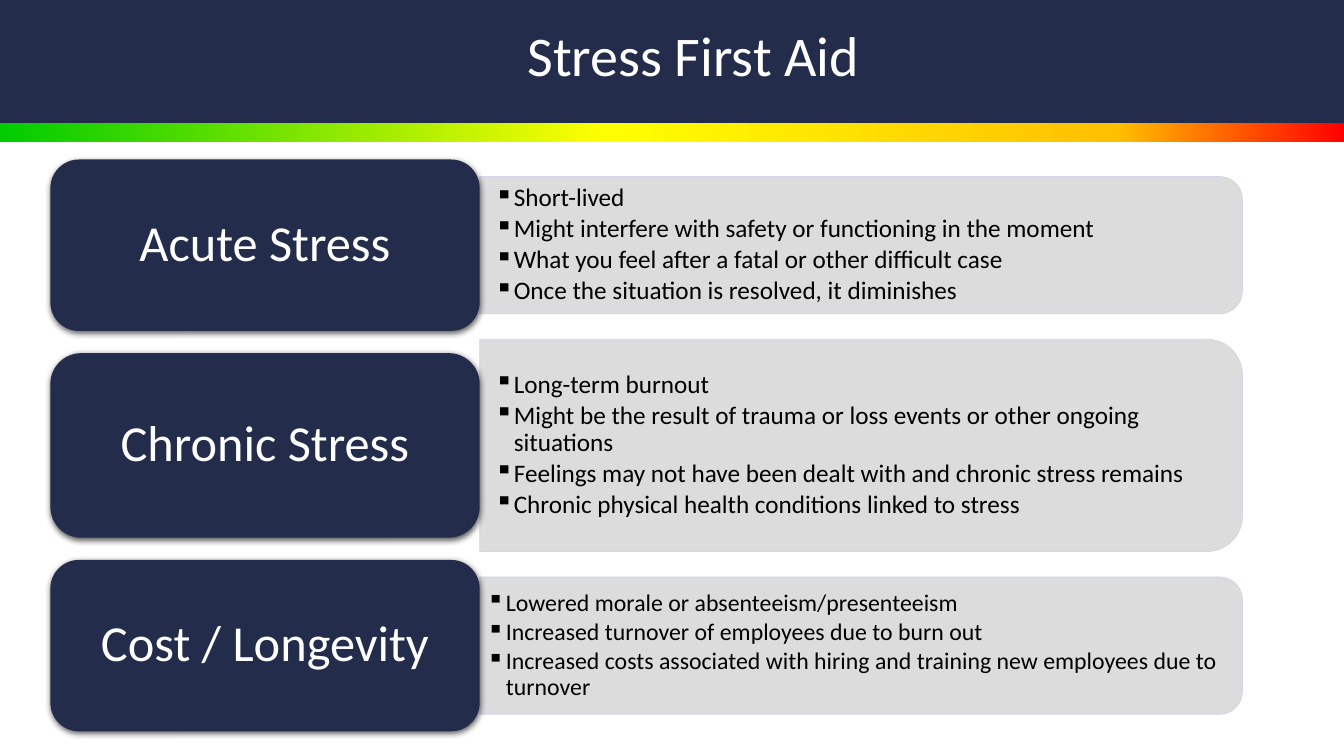
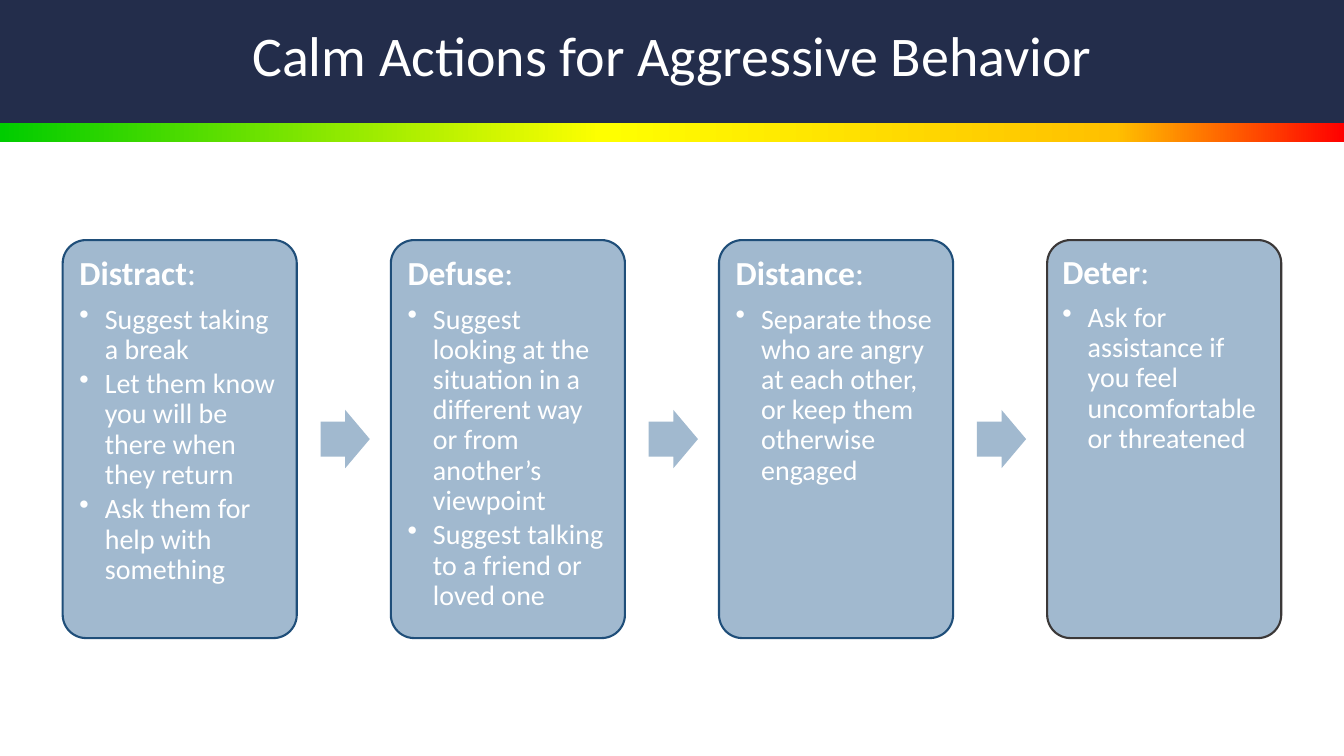
"""Build two slides on stress first aid and calming actions."""
from dataclasses import dataclass

from lxml import etree
from pptx import Presentation
from pptx.dml.color import RGBColor
from pptx.enum.shapes import MSO_SHAPE
from pptx.enum.text import MSO_ANCHOR, PP_ALIGN
from pptx.oxml.ns import qn
from pptx.util import Cm, Pt

RECTANGLE = MSO_SHAPE.RECTANGLE
ROUNDED = MSO_SHAPE.ROUNDED_RECTANGLE
ROUND_TOP = MSO_SHAPE.ROUND_2_SAME_RECTANGLE
ARROW = MSO_SHAPE.RIGHT_ARROW
TOP, MIDDLE = MSO_ANCHOR.TOP, MSO_ANCHOR.MIDDLE
LEFT, CENTER = PP_ALIGN.LEFT, PP_ALIGN.CENTER
SLIDE_WIDTH, SLIDE_HEIGHT = 33.87, 19.05


@dataclass(frozen=True)
class Theme:
    """Colours, font and type sizes of the slides."""
    font: str = "Calibri"
    navy: str = "232D4B"
    panel: str = "D9D9D9"
    panel_edge: str = "CFD5EA"
    steel: str = "A1B9CF"
    card_edge: str = "1F4E79"
    last_card_edge: str = "3B3838"
    white: str = "FFFFFF"
    black: str = "000000"
    scale: tuple = ((0, "00CC00"), (45, "FFFF00"), (83, "FFC000"), (100, "FF0000"))
    title_size: int = 40
    label_size: int = 36
    heading_size: int = 24
    card_size: int = 20
    detail_size: int = 18


THEME = Theme()


def add_element(parent, tag, **attributes):
    """Append a drawing element with the given attributes."""
    return etree.SubElement(parent, qn(tag), {name: str(value) for name, value in attributes.items()})


def write(frame, text, *, size, color, bold=False, ending="", align=LEFT,
          bullet=None, hang=0, after=0):
    """Add one paragraph, with an optional plain ending, to a text frame."""
    first = frame.paragraphs[0]
    paragraph = frame.add_paragraph() if first.runs else first
    paragraph.alignment = align
    paragraph.line_spacing = 0.9
    paragraph.space_after = Pt(after * size)
    if bullet:
        properties = paragraph._p.get_or_add_pPr()
        properties.set("marL", str(Cm(hang)))
        properties.set("indent", str(-Cm(hang)))
        add_element(properties, "a:buChar", char=bullet)
    for words, weight in ((text, bold), (ending, False)):
        if words:
            run = paragraph.add_run()
            run.text = words
            run.font.name = THEME.font
            run.font.size = Pt(size)
            run.font.bold = weight
            run.font.color.rgb = RGBColor.from_string(color)


class Deck:
    """Hold the presentation, its style and the current slide."""

    def __init__(self):
        """Start an empty widescreen presentation."""
        self.presentation = Presentation()
        self.presentation.slide_width = Cm(SLIDE_WIDTH)
        self.presentation.slide_height = Cm(SLIDE_HEIGHT)
        self.slide = None

    def start_slide(self, title, title_left=1.7, title_width=30.48):
        """Add a slide with the colour scale, the band and the title."""
        self.slide = self.presentation.slides.add_slide(self.presentation.slide_layouts[6])
        self.scale_bar(3.1, 0.48)
        self.shape(RECTANGLE, 0, 0, SLIDE_WIDTH, 3.1, THEME.navy)
        frame = self.text_box(title_left, 0.06, title_width, 2.8)
        write(frame, title, size=THEME.title_size, color=THEME.white, align=CENTER)

    def shape(self, kind, left, top, width, height, fill, edge=None, edge_width=1.5):
        """Add a flat preset shape with an optional outline."""
        shape = self.slide.shapes.add_shape(kind, Cm(left), Cm(top), Cm(width), Cm(height))
        shape.shadow.inherit = False
        shape.fill.solid()
        shape.fill.fore_color.rgb = RGBColor.from_string(fill)
        if edge:
            shape.line.color.rgb = RGBColor.from_string(edge)
            shape.line.width = Pt(edge_width)
        else:
            shape.line.fill.background()
        return shape

    def prepare(self, frame, across, down, anchor):
        """Set wrapping, insets and anchor of a text frame."""
        frame.word_wrap = True
        frame.margin_left = frame.margin_right = Cm(across)
        frame.margin_top = frame.margin_bottom = Cm(down)
        frame.vertical_anchor = anchor
        return frame

    def text_box(self, left, top, width, height, across=0.25, down=0.13):
        """Add a text box centred vertically and return its frame."""
        box = self.slide.shapes.add_textbox(Cm(left), Cm(top), Cm(width), Cm(height))
        return self.prepare(box.text_frame, across, down, MIDDLE)

    def scale_bar(self, top, height):
        """Add the full-width bar that runs from green to red."""
        bar = self.shape(RECTANGLE, 0, top, SLIDE_WIDTH, height, THEME.white)
        bar.fill.gradient()
        bar.fill.gradient_angle = 0
        stops = bar.element.spPr.find(".//" + qn("a:gsLst"))
        for stop in list(stops):
            stops.remove(stop)
        for percent, color in THEME.scale:
            add_element(add_element(stops, "a:gs", pos=percent * 1000), "a:srgbClr", val=color)

    def label(self, text, left, top, width, height):
        """Add a navy rounded label with a soft shadow."""
        label = self.shape(ROUNDED, left, top, width, height, THEME.navy)
        effects = label.element.spPr.find(qn("a:effectLst"))
        shadow = add_element(effects, "a:outerShdw", blurRad=Pt(4.5), dist=Pt(1.5),
                             dir=5400000, algn="ctr", rotWithShape=0)
        color = add_element(shadow, "a:srgbClr", val=THEME.black)
        add_element(color, "a:alpha", val=63000)
        frame = self.prepare(label.text_frame, 0.38, 0.18, MIDDLE)
        write(frame, text, size=THEME.label_size, color=THEME.white, align=CENTER)

    def detail_panel(self, items, left, middle, width, height, size, across):
        """Add a grey panel rounded on the right with a bulleted list."""
        panel = self.shape(ROUND_TOP, left + (width - height) / 2, middle - width / 2,
                           height, width, THEME.panel, THEME.panel_edge, 0.5)
        panel.rotation = 90
        for color in panel.element.spPr.iter(qn("a:srgbClr")):
            add_element(color, "a:alpha", val=90000)
        frame = self.text_box(left, middle - height / 2, width - 0.17, height, across, across / 2)
        for item in items:
            write(frame, item, size=size, color=THEME.black, bullet="▪", hang=0.48, after=0.15)

    def card(self, heading, items, left, top, width, height, edge, inset):
        """Add a rounded card with a heading and a bulleted list."""
        card = self.shape(ROUNDED, left, top, width, height, THEME.steel, edge)
        card.adjustments[0] = 0.1
        frame = self.prepare(card.text_frame, inset, inset, TOP)
        write(frame, heading, size=THEME.heading_size, color=THEME.white,
              bold=True, ending=":", after=0.35)
        for item in items:
            write(frame, item, size=THEME.card_size, color=THEME.white,
                  bullet="•", hang=0.64, after=0.15)

    def arrow(self, left, middle, width, height):
        """Add an arrow that points to the next card."""
        arrow = self.shape(ARROW, left, middle - height / 2, width, height, THEME.steel)
        arrow.adjustments[0] = 0.6
        arrow.adjustments[1] = 0.5


def build_stress_slide(deck):
    """Set out the kinds of stress and their costs in three rows."""
    deck.start_slide("Stress First Aid", 5.51, 23.93)
    rows = (
        ("Acute Stress", 4.32, 3.46, THEME.detail_size, 0.38, (
            "Short-lived",
            "Might interfere with safety or functioning in the moment",
            "What you feel after a fatal or other difficult case",
            "Once the situation is resolved, it diminishes")),
        ("Chronic Stress", 4.65, 5.35, THEME.detail_size, 0.38, (
            "Long-term burnout",
            "Might be the result of trauma or loss events or other ongoing situations",
            "Feelings may not have been dealt with and chronic stress remains",
            "Chronic physical health conditions linked to stress")),
        ("Cost / Longevity", 4.32, 3.46, THEME.detail_size - 1, 0.18, (
            "Lowered morale or absenteeism/presenteeism",
            "Increased turnover of employees due to burn out",
            "Increased costs associated with hiring and training new employees due to turnover")),
    )
    left, top, label_width, panel_width, gap = 1.27, 4.02, 10.82, 19.22, 0.56
    for name, label_height, panel_height, size, inset, items in rows:
        deck.detail_panel(items, left + label_width, top + label_height / 2,
                          panel_width, panel_height, size, inset)
        deck.label(name, left, top, label_width, label_height)
        top += label_height + gap


def build_actions_slide(deck):
    """Set out the four calming actions as linked cards."""
    deck.start_slide("Calm Actions for Aggressive Behavior")
    cards = (
        ("Distract", THEME.card_edge, 0.25, (
            "Suggest taking a break",
            "Let them know you will be there when they return",
            "Ask them for help with something")),
        ("Defuse", THEME.card_edge, 0.25, (
            "Suggest looking at the situation in a different way or from another’s viewpoint",
            "Suggest talking to a friend or loved one")),
        ("Distance", THEME.card_edge, 0.25, (
            "Separate those who are angry at each other, or keep them otherwise engaged",)),
        ("Deter", THEME.last_card_edge, 0.21, (
            "Ask for assistance if you feel uncomfortable or threatened",)),
    )
    first_left, top, width, height, step = 1.58, 6.05, 5.9, 10.03, 8.27
    for index, (heading, edge, inset, items) in enumerate(cards):
        left = first_left + index * step
        deck.card(heading, items, left, top, width, height, edge, inset)
        if index < len(cards) - 1:
            deck.arrow(left + width + 0.6, top + height / 2, 1.24, 1.47)


def main():
    """Build the slides and save the presentation."""
    deck = Deck()
    build_stress_slide(deck)
    build_actions_slide(deck)
    deck.presentation.save("out.pptx")


if __name__ == "__main__":
    main()
